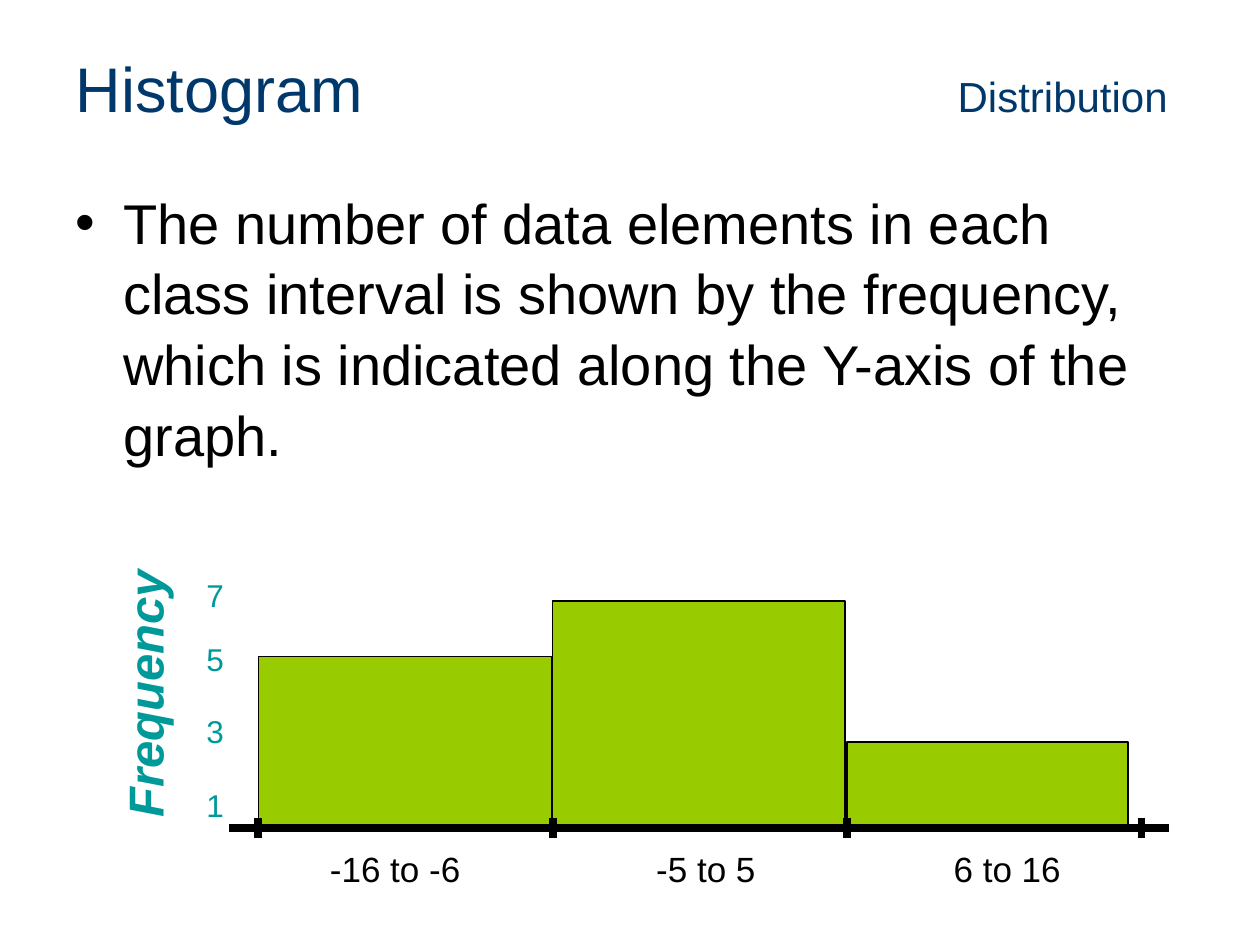
from dataclasses import dataclass

from lxml.etree import SubElement
from pptx import Presentation
from pptx.dml.color import RGBColor
from pptx.enum.shapes import MSO_CONNECTOR as Connector, MSO_SHAPE as Shape
from pptx.enum.text import MSO_ANCHOR as Anchor, PP_ALIGN as Align
from pptx.oxml.ns import qn
from pptx.util import Inches, Pt


@dataclass(frozen=True)
class Theme:
    font: str = "Arial"
    navy: RGBColor = RGBColor(0x00, 0x38, 0x6B)
    teal: RGBColor = RGBColor(0x00, 0x99, 0x99)
    green: RGBColor = RGBColor(0x99, 0xCC, 0x00)
    black: RGBColor = RGBColor(0x00, 0x00, 0x00)
    title: int = 36
    body: int = 32
    axis_title: int = 28
    subtitle: int = 24
    interval: int = 20
    scale: int = 18
    outline: float = 0.75
    axis: float = 4.5


THEME = Theme()


def set_all(target, values):
    for name, value in values.items():
        setattr(target, name, value)


def add_span(para, text, size, color, **style):
    span = para.add_run()
    span.text = text
    set_all(span.font, {"name": THEME.font, "size": Pt(size), **style})
    span.font.color.rgb = color


def add_text(page, box, text, size, color, align=Align.LEFT, wrap=True, **style):
    label = page.shapes.add_textbox(*map(Inches, box))
    label.text_frame.word_wrap = wrap
    para = label.text_frame.paragraphs[0]
    para.alignment = align
    add_span(para, text, size, color, **style)
    return label


def add_line(page, start, end):
    line = page.shapes.add_connector(
        Connector.STRAIGHT, *map(Inches, (*start, *end)))
    line.line.width = Pt(THEME.axis)
    line.line.color.rgb = THEME.black
    SubElement(line._element.spPr, qn("a:effectLst"))


def add_title(page, box):
    title = page.shapes.title
    set_all(title, dict(zip(("left", "top", "width", "height"), map(Inches, box))))
    set_all(title.text_frame, {"vertical_anchor": Anchor.MIDDLE, "word_wrap": True})
    para = title.text_frame.paragraphs[0]
    para.alignment = Align.LEFT
    tabs = SubElement(para._p.get_or_add_pPr(), qn("a:tabLst"))
    SubElement(tabs, qn("a:tab"), pos=str(Inches(7)), algn="l")
    add_span(para, "Histogram \t", THEME.title, THEME.navy)
    add_span(para, "Distribution", THEME.subtitle, THEME.navy)


def add_body(page, box, text):
    body = add_text(page, box, text, THEME.body, THEME.black)
    para = body.text_frame.paragraphs[0]
    para.line_spacing = 1.05
    props = para._p.get_or_add_pPr()
    indent = Inches(0.38)
    props.set("marL", str(indent))
    props.set("indent", str(-indent))
    SubElement(props, qn("a:buFont"), typeface=THEME.font)
    SubElement(props, qn("a:buChar"), char="•")


def add_bar(page, box):
    bar = page.shapes.add_shape(Shape.RECTANGLE, *map(Inches, box))
    bar.shadow.inherit = False
    bar.fill.solid()
    bar.fill.fore_color.rgb = THEME.green
    bar.line.color.rgb = THEME.black
    bar.line.width = Pt(THEME.outline)


def add_histogram(page, box):
    left, top, width, height = box
    base = top + height
    intervals = [
        ("-16 to -6", 2.33, 1.35, 2.52, 1.26),
        ("-5 to 5", 2.32, 1.79, 5.11, 1.04),
        ("6 to 16", 2.23, 0.67, 7.47, 1.09),
    ]
    step = width / len(intervals)
    for index, (name, bar_width, bar_height, label_left, label_width) in enumerate(intervals):
        add_bar(page, (left + index * step, base - bar_height, bar_width, bar_height))
        add_text(page, (label_left, base + 0.12, label_width, 0.43), name,
                 THEME.interval, THEME.black, wrap=False)

    for index in range(len(intervals) + 1):
        edge = left + index * step
        add_line(page, (edge, base - 0.07), (edge, base + 0.09))
    add_line(page, (1.82, base + 0.01), (9.28, base + 0.01))

    for value, label_top in ((7, 4.52), (5, 5.03), (3, 5.6), (1, 6.19)):
        add_text(page, (left - 0.51, label_top, 0.35, 0.4), str(value),
                 THEME.scale, THEME.teal)
    axis_title = add_text(page, (-0.12, 5.22, 2.53, 0.57), "Frequency",
                          THEME.axis_title, THEME.teal, Align.CENTER,
                          bold=True, italic=True)
    axis_title.rotation = 270


def main():
    deck = Presentation()
    set_all(deck, {"slide_width": Inches(10), "slide_height": Inches(7.5)})
    page = deck.slides.add_slide(deck.slide_layouts[5])
    add_title(page, (0.5, 0.3, 9, 0.78))
    add_body(page, (0.5, 1.42, 9, 2.4),
             "The number of data elements in each class interval is shown by the "
             "frequency, which is indicated along the Y-axis of the graph.")
    add_histogram(page, (2.05, 4.77, 7.01, 1.79))
    deck.save("out.pptx")


if __name__ == "__main__":
    main()
